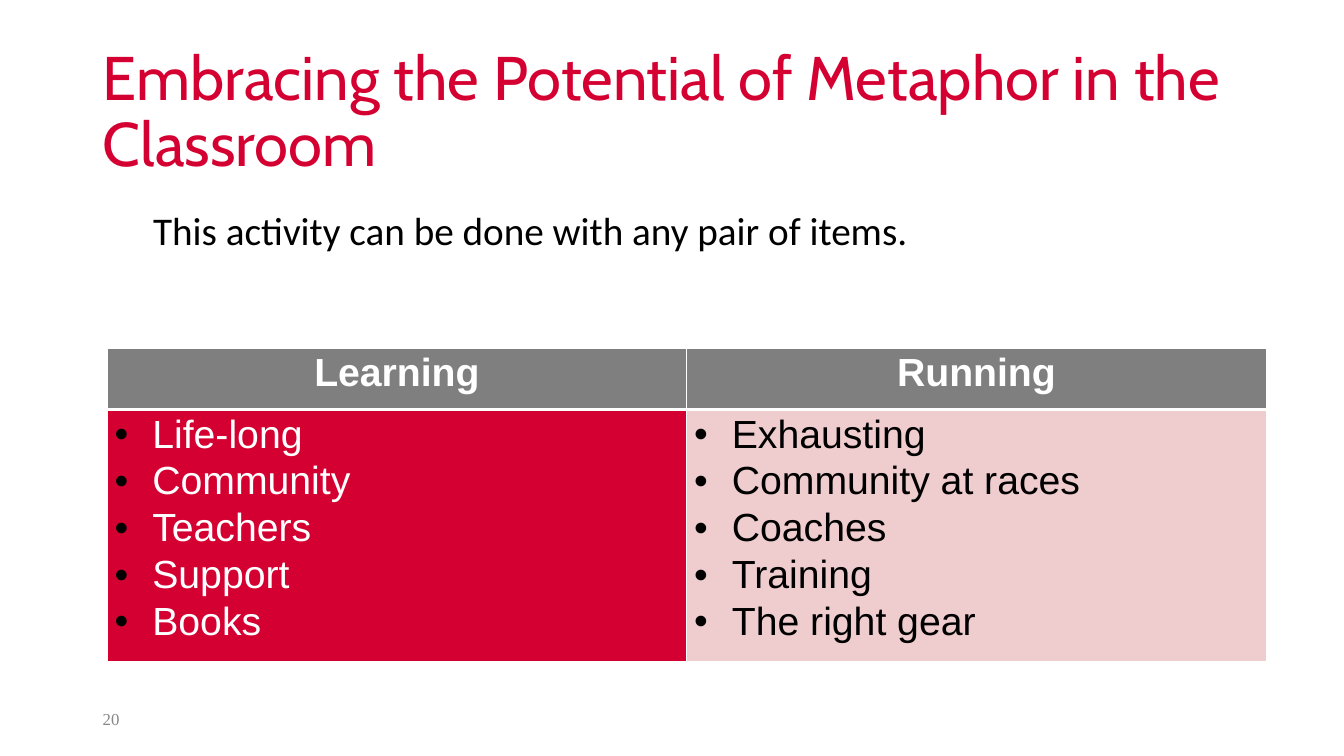
from lxml import etree
from pptx import Presentation
from pptx.dml.color import RGBColor
from pptx.enum.text import MSO_ANCHOR, MSO_AUTO_SIZE, PP_ALIGN
from pptx.oxml.ns import qn
from pptx.util import Cm, Pt

MIDDLE, TOP = MSO_ANCHOR.MIDDLE, MSO_ANCHOR.TOP
LEFT, CENTER = PP_ALIGN.LEFT, PP_ALIGN.CENTER
NO_FIT = MSO_AUTO_SIZE.NONE
COLORS = {
    "red": "D50032",
    "pink": "EFCCCE",
    "header": "7F7F7F",
    "number": "888888",
    "white": "FFFFFF",
    "black": "000000",
}
TRAITS = {
    "Learning": ["Life-long", "Community", "Teachers", "Support", "Books"],
    "Running": ["Exhausting", "Community at races", "Coaches", "Training", "The right gear"],
}
COLUMN_STYLES = [("red", "white"), ("pink", "black")]


def write(para, text, font="Arial", size=28, color="black", bold=False,
          align=LEFT, line=1.0, after=0):
    para.alignment = align
    para.line_spacing = line
    para.space_before = Pt(0)
    para.space_after = Pt(after)
    span = para.add_run()
    span.text = text
    span.font.name = font
    span.font.size = Pt(size)
    span.font.bold = bold
    span.font.color.rgb = RGBColor.from_string(COLORS[color])


def add_bullet(para, indent):
    properties = para._p.get_or_add_pPr()
    properties.set("marL", str(indent))
    properties.set("indent", str(-indent))
    bullet_color = etree.SubElement(properties, qn("a:buClr"))
    etree.SubElement(bullet_color, qn("a:srgbClr"), val=COLORS["black"])
    etree.SubElement(properties, qn("a:buFont"), typeface="Arial")
    etree.SubElement(properties, qn("a:buChar"), char="•")


def add_borders(cell, top, bottom):
    properties = cell._tc.get_or_add_tcPr()
    widths = {"a:lnL": 1, "a:lnR": 1, "a:lnT": top, "a:lnB": bottom}
    for position, (side, width) in enumerate(widths.items()):
        border = etree.Element(qn(side), w=str(Pt(width)))
        fill = etree.SubElement(border, qn("a:solidFill"))
        etree.SubElement(fill, qn("a:srgbClr"), val=COLORS["white"])
        properties.insert(position, border)


def style_cell(cell, fill, top, bottom):
    cell.fill.solid()
    cell.fill.fore_color.rgb = RGBColor.from_string(COLORS[fill])
    cell.margin_left = cell.margin_right = Cm(0.19)
    cell.margin_top = cell.margin_bottom = 0
    cell.vertical_anchor = TOP
    add_borders(cell, top, bottom)


def place_title(page, left, top, width, height):
    title = page.shapes.title
    title.left, title.top, title.width, title.height = left, top, width, height
    frame = title.text_frame
    frame.auto_size = NO_FIT
    frame.vertical_anchor = MIDDLE
    write(frame.paragraphs[0], "Embracing the Potential of Metaphor in the Classroom",
          font="Cabin", size=44, color="red", line=0.9)


def place_text(page, left, top, width, height, text, anchor=TOP, indent=0, **style):
    box = page.shapes.add_textbox(left, top, width, height)
    frame = box.text_frame
    frame.word_wrap = True
    frame.vertical_anchor = anchor
    para = frame.paragraphs[0]
    para._p.get_or_add_pPr().set("indent", str(indent))
    write(para, text, **style)


def place_table(page, left, top, width, header_height, body_height):
    frame = page.shapes.add_table(2, len(TRAITS), left, top, width,
                                  header_height + body_height)
    table = frame.table
    table.rows[0].height, table.rows[1].height = header_height, body_height
    for index, (heading, traits) in enumerate(TRAITS.items()):
        fill, color = COLUMN_STYLES[index]
        header, body = table.cell(0, index), table.cell(1, index)
        style_cell(header, "header", 1, 3)
        style_cell(body, fill, 3, 1)
        write(header.text_frame.paragraphs[0], heading, color="white", bold=True,
              align=CENTER, line=1.07, after=8)
        for row, trait in enumerate(traits):
            content = body.text_frame
            para = content.add_paragraph() if row else content.paragraphs[0]
            add_bullet(para, Cm(0.95))
            write(para, trait, color=color, line=1.07)


def main():
    deck = Presentation()
    deck.slide_width, deck.slide_height = Cm(33.87), Cm(19.05)
    page = deck.slides.add_slide(deck.slide_layouts[5])
    left, width = Cm(2.34), Cm(29.21)
    place_title(page, left, Cm(1.02), width, Cm(3.68))
    place_text(page, left, Cm(5.08), width, Cm(12.09),
               "This activity can be done with any pair of items.",
               indent=Cm(1.27), font="Calibri")
    place_table(page, Cm(2.7), Cm(8.77), width, Cm(1.55), Cm(4.98))
    place_text(page, left, Cm(17.6), Cm(7.62), Cm(1.02), "20", anchor=MIDDLE,
               font="Times New Roman", size=12, color="number")
    deck.save("out.pptx")


if __name__ == "__main__":
    main()
